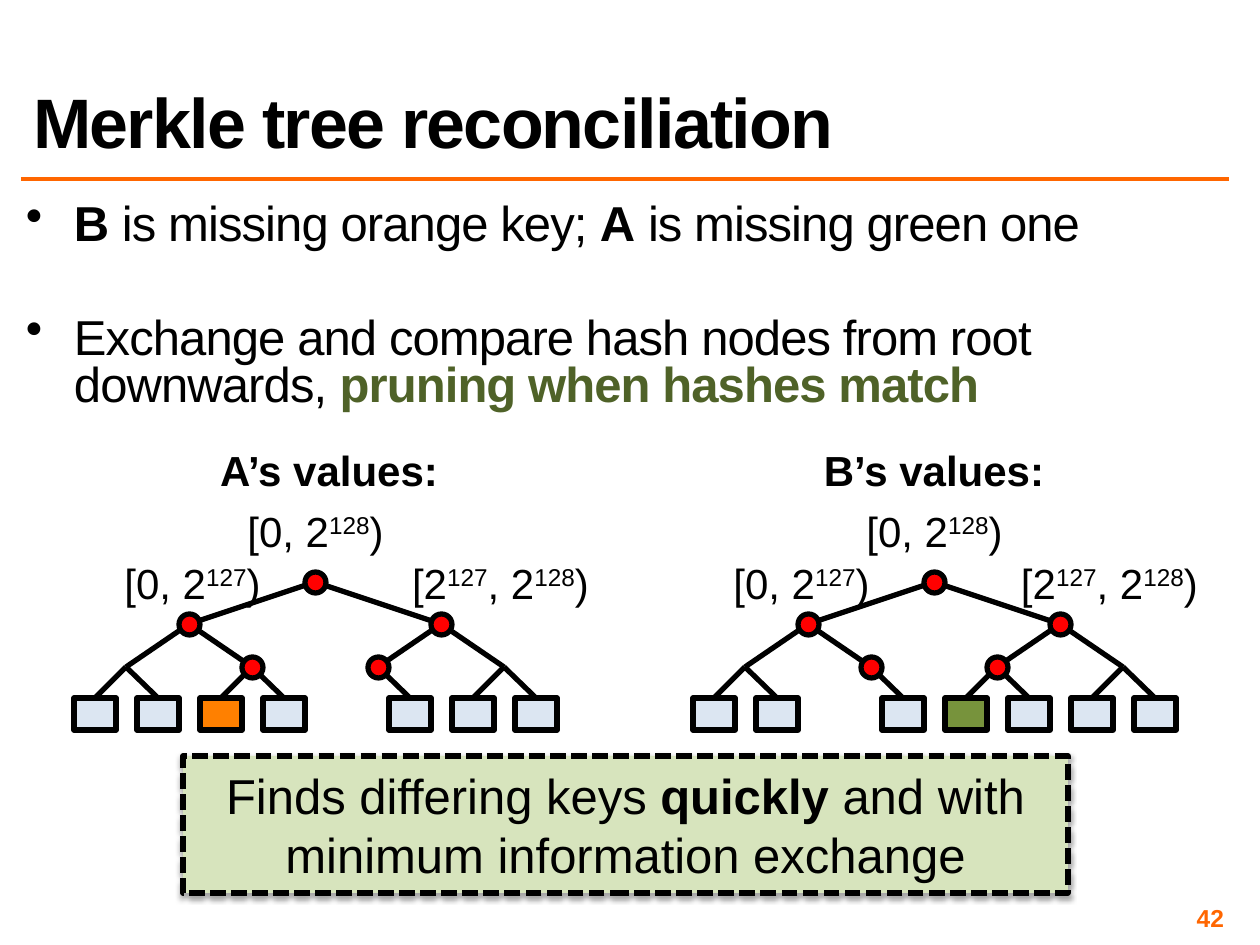
from dataclasses import dataclass

import pptx
import pptx.dml.color
import pptx.enum.dml
import pptx.enum.shapes
import pptx.enum.text
import pptx.oxml.ns
import pptx.util
from lxml import etree

RGBColor = pptx.dml.color.RGBColor
Align = pptx.enum.text.PP_ALIGN
Anchor = pptx.enum.text.MSO_ANCHOR
Shape = pptx.enum.shapes.MSO_SHAPE
qn = pptx.oxml.ns.qn

BLACK = RGBColor(0x00, 0x00, 0x00)
ACCENT = RGBColor(0xFF, 0x66, 0x00)
DARK_GREEN = RGBColor(0x4F, 0x62, 0x28)
PALE_BLUE = RGBColor(0xDC, 0xE6, 0xF2)
ORANGE_KEY = RGBColor(0xFF, 0x80, 0x00)
GREEN_KEY = RGBColor(0x77, 0x93, 0x3C)
RED = RGBColor(0xFF, 0x00, 0x00)
PALE_GREEN = RGBColor(0xD7, 0xE4, 0xBD)

PX_PER_INCH = 126
FONT = "Arial"
LEAF_PITCH, LEAF_W, LEAF_H, LEAF_TOP = 63, 42, 32, 698
ROOT_Y, BRANCH_Y, TWIG_Y = 582, 624, 667
HASH_SIZE = 21


@dataclass(frozen=True)
class Box:
    left: int
    top: int
    width: int
    height: int


@dataclass(frozen=True)
class Span:
    text: str
    bold: bool = False
    raised: bool = False
    color: RGBColor | None = None


@dataclass(frozen=True)
class Label:
    spans: list[Span]
    box: Box
    bold: bool = False


@dataclass(frozen=True)
class Tree:
    first_leaf_x: int
    missing_leaf: int
    special_leaf: int
    special_color: RGBColor
    labels: list[Label]


def px(length: int) -> int:
    return round(length * 914400 / PX_PER_INCH)


def place(box: Box) -> list[int]:
    return [px(box.left), px(box.top), px(box.width), px(box.height)]


def write(paragraph, spans: list[Span], size: int, color: RGBColor = BLACK,
          bold: bool = False, tracking: int = 0) -> None:
    font = paragraph.font
    font.name, font.size, font.bold = FONT, pptx.util.Pt(size), bold
    font.color.rgb = color
    for span in spans:
        run = paragraph.add_run()
        run.text = span.text
        if span.bold:
            run.font.bold = True
        if span.color is not None:
            run.font.color.rgb = span.color
        if span.raised:
            run.font._element.set("baseline", "30000")
        if tracking:
            run.font._element.set("spc", str(tracking))


def add_text_frame(slide, box: Box, anchor=Anchor.TOP, wrap: bool = True, inset: int | None = None):
    frame = slide.shapes.add_textbox(*place(box)).text_frame
    frame.word_wrap, frame.vertical_anchor = wrap, anchor
    if inset is not None:
        frame.margin_left = frame.margin_right = px(inset)
        frame.margin_top = frame.margin_bottom = px(inset)
    return frame


def add_bullet(paragraph, indent: int) -> None:
    properties = paragraph._p.get_or_add_pPr()
    properties.set("marL", str(px(indent)))
    properties.set("indent", str(-px(indent)))
    bullet = etree.Element(qn("a:buChar"), char="•")
    default_font = properties.find(qn("a:defRPr"))
    default_font.addprevious(bullet)


def add_line(slide, start: tuple[int, int], end: tuple[int, int],
             color: RGBColor = BLACK, weight: int = 3):
    line = slide.shapes.add_connector(
        pptx.enum.shapes.MSO_CONNECTOR.STRAIGHT, *map(px, start + end))
    line.line.color.rgb, line.line.width = color, pptx.util.Pt(weight)
    etree.SubElement(line._element.spPr, qn("a:effectLst"))
    return line


def add_outlined(slide, kind, box: Box, fill: RGBColor):
    shape = slide.shapes.add_shape(kind, *place(box))
    shape.shadow.inherit = False
    shape.fill.solid()
    shape.fill.fore_color.rgb = fill
    shape.line.color.rgb, shape.line.width = BLACK, pptx.util.Pt(3)
    return shape


def draw_tree(slide, tree: Tree) -> None:
    def x_at(half_steps: int) -> int:
        return tree.first_leaf_x + LEAF_PITCH * half_steps // 2

    root = (x_at(7), ROOT_Y)
    branches = [(x_at(8 * i + 3), BRANCH_Y) for i in range(2)]
    twigs = [(x_at(4 * i + 1), TWIG_Y) for i in range(4)]

    # Leaves, each joined to its twig
    for i in range(8):
        if i == tree.missing_leaf:
            continue
        x = x_at(2 * i)
        fill = tree.special_color if i == tree.special_leaf else PALE_BLUE
        leaf = add_outlined(slide, Shape.RECTANGLE,
                            Box(x - LEAF_W // 2, LEAF_TOP, LEAF_W, LEAF_H), fill)
        add_line(slide, (x, LEAF_TOP), twigs[i // 2]).begin_connect(leaf, 0)

    # Upper edges
    for i, twig in enumerate(twigs):
        add_line(slide, branches[i // 2], twig)
    for branch in branches:
        add_line(slide, branch, root)

    # Heading and key ranges
    for label in tree.labels:
        paragraph = add_text_frame(slide, label.box, wrap=False).paragraphs[0]
        paragraph.alignment = Align.CENTER
        write(paragraph, label.spans, 24, bold=label.bold)

    # Exchanged hashes
    for x, y in [root, *branches, *twigs[1:3]]:
        add_outlined(slide, Shape.OVAL, Box(x - HASH_SIZE // 2, y - HASH_SIZE // 2,
                                            HASH_SIZE, HASH_SIZE), RED)


def tree_labels(owner: str, heading_x: int, root_x: int, left_x: int, right_x: int) -> list[Label]:
    def low_range(exponent: str) -> list[Span]:
        return [Span("[0, 2"), Span(exponent, raised=True), Span(")")]

    high_range = [Span("[2"), Span("127", raised=True), Span(", 2"),
                  Span("128", raised=True), Span(")")]
    return [Label([Span(f"{owner}’s values:")], Box(heading_x, 438, 248, 63), bold=True),
            Label(low_range("128"), Box(root_x, 499, 169, 63)),
            Label(low_range("127"), Box(left_x, 551, 169, 63)),
            Label(high_range, Box(right_x, 551, 223, 63))]


def main() -> None:
    deck = pptx.Presentation()
    deck.slide_width, deck.slide_height = px(1260), px(945)
    slide = deck.slides.add_slide(deck.slide_layouts[6])

    # Title and rule
    add_line(slide, (21, 179), (1229, 179), ACCENT, 2)
    title = add_text_frame(slide, Box(21, 21, 1207, 147), Anchor.BOTTOM).paragraphs[0]
    title.line_spacing = 0.8
    write(title, [Span("Merkle tree reconciliation")], 40, bold=True, tracking=-100)

    # Bullets
    body = add_text_frame(slide, Box(21, 199, 1207, 229), inset=5)
    points = [
        (6, [Span("B", bold=True), Span(" is missing orange key; "),
             Span("A", bold=True), Span(" is missing green one")]),
        (38, [Span("Exchange and compare hash nodes from root downwards, "),
              Span("pruning when hashes match", bold=True, color=DARK_GREEN)]),
    ]
    for i, (gap, spans) in enumerate(points):
        point = body.add_paragraph() if i else body.paragraphs[0]
        point.line_spacing, point.space_before = 0.8, pptx.util.Pt(gap)
        write(point, spans, 28, tracking=-50)
        add_bullet(point, 48)

    # Trees
    for tree in (Tree(95, 4, 2, ORANGE_KEY, tree_labels("A", 205, 231, 108, 389)),
                 Tree(714, 2, 4, GREEN_KEY, tree_labels("B", 810, 850, 717, 998))):
        draw_tree(slide, tree)

    # Conclusion
    conclusion = add_outlined(slide, Shape.RECTANGLE, Box(183, 756, 885, 137), PALE_GREEN)
    conclusion.line.dash_style = pptx.enum.dml.MSO_LINE.SQUARE_DOT
    effects = conclusion._element.spPr.find(qn("a:effectLst"))
    shadow = etree.SubElement(effects, qn("a:outerShdw"), blurRad="40000", dist="23000",
                              dir="5400000", rotWithShape="0")
    shade = etree.SubElement(shadow, qn("a:srgbClr"), val=str(BLACK))
    etree.SubElement(shade, qn("a:alpha"), val="35000")
    conclusion.text_frame.vertical_anchor = Anchor.MIDDLE
    verdict = conclusion.text_frame.paragraphs[0]
    verdict.alignment = Align.CENTER
    write(verdict, [Span("Finds differing keys "), Span("quickly", bold=True),
                    Span(" and with minimum information exchange")], 28)

    # Page number
    page = add_text_frame(slide, Box(935, 903, 294, 29), Anchor.MIDDLE, inset=5).paragraphs[0]
    page.alignment = Align.RIGHT
    write(page, [Span("42")], 14, ACCENT, bold=True)

    deck.save("out.pptx")


if __name__ == "__main__":
    main()
